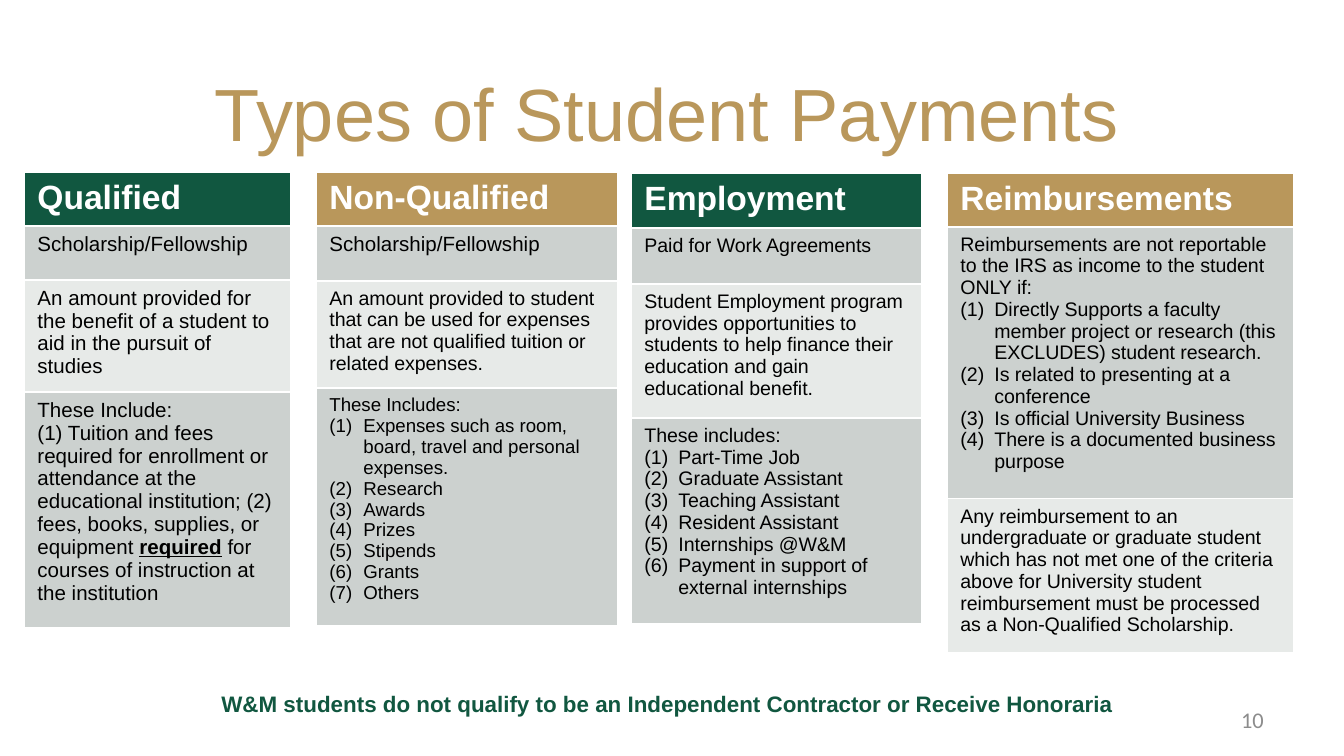
from dataclasses import dataclass
from lxml.etree import SubElement
from pptx import Presentation
from pptx.dml.color import RGBColor as Rgb
from pptx.enum.text import MSO_ANCHOR as Anchor, PP_ALIGN as Align
from pptx.oxml.ns import qn
from pptx.util import Pt


@dataclass(frozen=True)
class Theme:
    green: str = "115740"
    gold: str = "B9975B"
    dark_band: str = "CCD1CF"
    light_band: str = "E7EAE8"
    white: str = "FFFFFF"
    black: str = "000000"
    gray: str = "8C8C8C"
    font: str = "Arial"
    number_font: str = "Calibri"
    title_size: float = 39.6
    header_size: float = 18
    note_size: float = 12
    large: float = 11
    medium: float = 10.5
    small: float = 10


theme = Theme()
EMU_PER_PX = 914400 / 134.4
NUMBER_INDENT = 34


def px(length):
    return round(length * EMU_PER_PX)


def style(paragraph, size, color, bold=False, name=theme.font):
    font = paragraph.font
    font.name, font.size, font.bold = name, Pt(size), bold
    font.color.rgb = Rgb.from_string(color)


presentation = Presentation()
presentation.slide_width, presentation.slide_height = px(1344), px(756)
slide = presentation.slides.add_slide(presentation.slide_layouts[6])

labels = [
    ("Types of Student Payments", (62, 63, 1210, 97), Align.CENTER, Anchor.MIDDLE,
     (theme.title_size, theme.gold)),
    ("10", (964, 700, 313, 40), Align.RIGHT, Anchor.MIDDLE,
     (theme.note_size, theme.gray, False, theme.number_font)),
    ("W&M students do not qualify to be an Independent Contractor or Receive Honoraria",
     (113, 684, 1109, 41), Align.CENTER, Anchor.TOP,
     (theme.note_size, theme.green, True)),
]
for text, box, align, anchor, look in labels:
    frame = slide.shapes.add_textbox(*map(px, box)).text_frame
    frame.word_wrap = True
    frame.vertical_anchor = anchor
    paragraph = frame.paragraphs[0]
    paragraph.text = text
    paragraph.alignment = align
    style(paragraph, *look)

# Each body row: height, type size, opening paragraph, numbered items
payment_types = [
    ("Qualified", theme.green, (24, 172, 267), 54, [
        (54, theme.large, "Scholarship/Fellowship", []),
        (105, theme.large, "An amount provided for the benefit of a student to aid in "
         "the pursuit of studies", []),
        (219, theme.large, "These Include:", []),
    ]),
    ("Non-Qualified", theme.gold, (316, 172, 302), 50, [
        (55, theme.large, "Scholarship/Fellowship", []),
        (100, theme.medium, "An amount provided to student that can be used for expenses "
         "that are not qualified tuition or related expenses.", []),
        (222, theme.small, "These Includes:", [
            "Expenses such as room, board, travel and personal expenses.",
            "Research", "Awards", "Prizes", "Stipends", "Grants", "Others"]),
    ]),
    ("Employment", theme.green, (631, 173, 291), 55, [
        (56, theme.medium, "Paid for Work Agreements", []),
        (134, theme.medium, "Student Employment program provides opportunities to students "
         "to help finance their education and gain educational benefit.", []),
        (206, theme.medium, "These includes:", [
            "Part-Time Job", "Graduate Assistant", "Teaching Assistant",
            "Resident Assistant", "Internships @W&M",
            "Payment in support of external internships"]),
    ]),
    ("Reimbursements", theme.gold, (947, 173, 347), 53, [
        (253, theme.medium, "Reimbursements are not reportable to the IRS as income to the "
         "student ONLY if:", [
             "Directly Supports a faculty member project or research (this EXCLUDES) "
             "student research.",
             "Is related to presenting at a conference",
             "Is official University Business",
             "There is a documented business purpose"]),
        (144, theme.medium, "Any reimbursement to an undergraduate or graduate student which "
         "has not met one of the criteria above for University student reimbursement must "
         "be processed as a Non-Qualified Scholarship.", []),
    ]),
]

tables = {}
for heading, accent, (left, top, width), header_height, body in payment_types:
    total = header_height + sum(row[0] for row in body)
    table = slide.shapes.add_table(
        len(body) + 1, 1, px(left), px(top), px(width), px(total)).table
    tables[heading] = table
    rows = [(header_height, theme.header_size, heading, [])] + body
    for index, (height, size, opening, items) in enumerate(rows):
        is_header = index == 0
        band = theme.dark_band if index % 2 else theme.light_band
        table.rows[index].height = px(height)
        cell = table.cell(index, 0)
        cell.fill.solid()
        cell.fill.fore_color.rgb = Rgb.from_string(accent if is_header else band)
        frame = cell.text_frame
        frame.text = "\n".join([opening, *items])
        for position, paragraph in enumerate(frame.paragraphs):
            if position:
                properties = paragraph._p.get_or_add_pPr()
                properties.set("marL", str(px(NUMBER_INDENT)))
                properties.set("indent", str(-px(NUMBER_INDENT)))
                SubElement(properties, qn("a:buFont"), typeface="+mj-lt")
                SubElement(properties, qn("a:buAutoNum"), type="arabicParenBoth")
            style(paragraph, size, theme.white if is_header else theme.black, is_header)

paragraph = tables["Qualified"].cell(3, 0).text_frame.add_paragraph()
for text, stressed in [
    ("(1) Tuition and fees required for enrollment or attendance at the educational "
     "institution; (2) fees, books, supplies, or equipment ", False),
    ("required", True),
    (" for courses of instruction at the institution", False),
]:
    run = paragraph.add_run()
    run.text = text
    if stressed:
        run.font.bold = run.font.underline = True
style(paragraph, theme.large, theme.black)

presentation.save("out.pptx")
